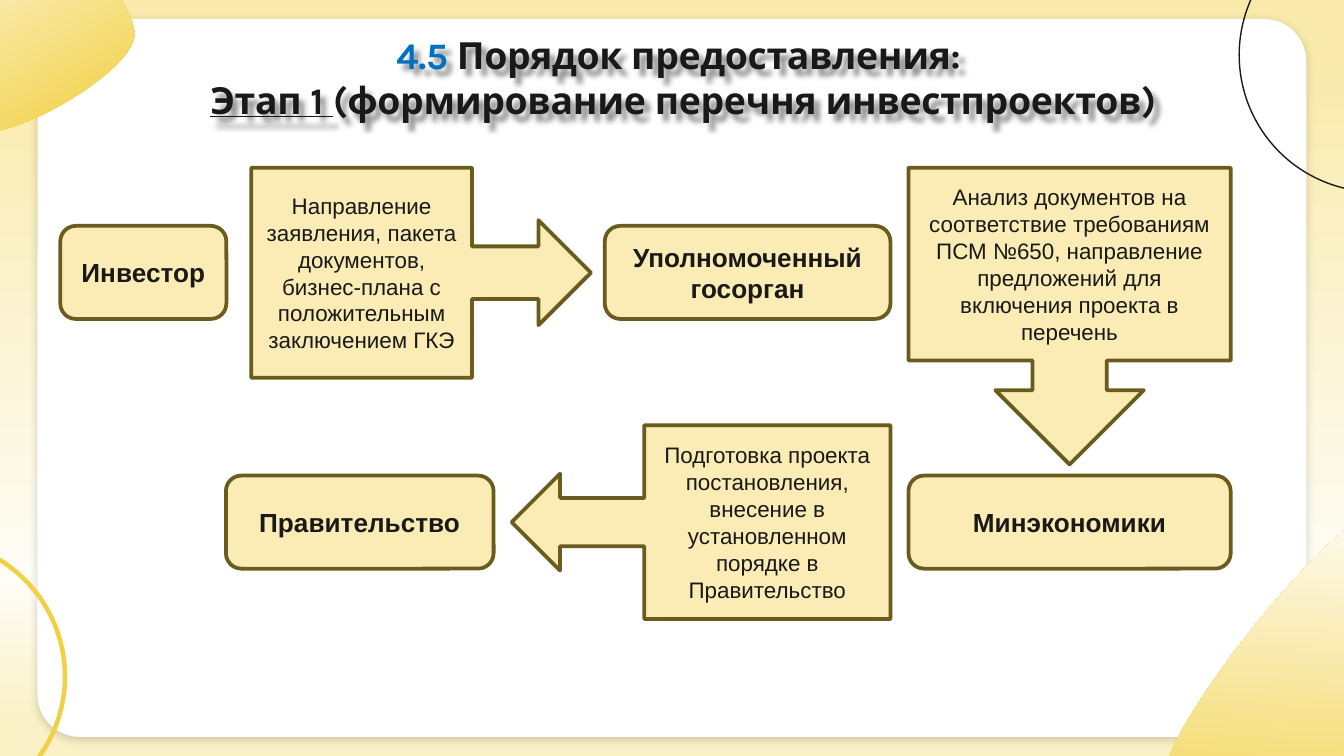
from lxml import etree
from pptx import Presentation
from pptx import util as u
from pptx.dml.color import RGBColor
from pptx.enum import shapes, text
from pptx.oxml.ns import qn

GOLD = RGBColor(0xF2, 0xD0, 0x44)
WHITE = RGBColor(0xFF, 0xFF, 0xFF)
INK = RGBColor(0x19, 0x19, 0x19)
BLUE = RGBColor(0x00, 0x70, 0xC0)
CREAM = RGBColor(0xFA, 0xEC, 0xB4)
BROWN = RGBColor(0x6A, 0x5B, 0x1E)
BLACK = RGBColor(0, 0, 0)
SKY = [(0, RGBColor(0xF9, 0xEA, 0xAB)), (7, RGBColor(0xF9, 0xEA, 0xAB)),
       (77, RGBColor(0xFE, 0xFD, 0xF6)), (95, RGBColor(0xFB, 0xF1, 0xC7))]
GLOW = [(0, GOLD), (15, GOLD), (100, WHITE)]
KIND = shapes.MSO_SHAPE


def paint_gradient(owner, fill, stops, clockwise):
    """Fill with any number of (percent, colour) stops."""
    fill.gradient()
    fill.gradient_angle = 360 - clockwise
    stop_list = owner.find(".//" + qn("a:gsLst"))
    for old in list(stop_list):
        stop_list.remove(old)
    for percent, colour in stops:
        stop = etree.SubElement(stop_list, qn("a:gs"), pos=str(percent * 1000))
        etree.SubElement(stop, qn("a:srgbClr"), val=str(colour))


def add_shadow(shape, opacity, blur, distance, degrees):
    shape.shadow.inherit = False
    effects = shape.element.spPr.find(qn("a:effectLst"))
    shadow = etree.SubElement(
        effects, qn("a:outerShdw"), blurRad=str(u.Pt(blur)), dist=str(u.Pt(distance)),
        dir=str(degrees * 60000), algn="bl", rotWithShape="0")
    colour = etree.SubElement(shadow, qn("a:srgbClr"), val=str(BLACK))
    etree.SubElement(colour, qn("a:alpha"), val=str(opacity * 1000))


def add_figure(page, kind, left, top, width, height, fill=None, line=None, weight=2):
    figure = page.shapes.add_shape(kind, u.Cm(left), u.Cm(top), u.Cm(width), u.Cm(height))
    figure.shadow.inherit = False
    if fill is None:
        figure.fill.background()
    else:
        figure.fill.solid()
        figure.fill.fore_color.rgb = fill
    if line is None:
        figure.line.fill.background()
    else:
        figure.line.color.rgb = line
        figure.line.width = u.Pt(weight)
    return figure


def add_blob(page, left, top, width, height, turn, start, curves):
    """Closed outline of cubic curves, in cm from the corner of its box."""
    builder = page.shapes.build_freeform(0, 0)
    builder.add_line_segments([(u.Cm(width), 0), (u.Cm(width), u.Cm(height))])
    blob = builder.convert_to_shape()
    outline = blob.element.find(".//" + qn("a:path"))
    for segment in list(outline):
        outline.remove(segment)
    outline.set("w", str(u.Cm(width)))
    outline.set("h", str(u.Cm(height)))
    for tag, points in [("a:moveTo", [start])] + [("a:cubicBezTo", c) for c in curves]:
        segment = etree.SubElement(outline, qn(tag))
        for x, y in points:
            etree.SubElement(segment, qn("a:pt"), x=str(u.Cm(x)), y=str(u.Cm(y)))
    etree.SubElement(outline, qn("a:close"))
    blob.left, blob.top = u.Cm(left), u.Cm(top)
    blob.width, blob.height = u.Cm(width), u.Cm(height)
    blob.rotation = turn
    blob.shadow.inherit = False
    blob.line.fill.background()
    paint_gradient(blob.element, blob.fill, GLOW, 225)


def add_span(para, words, font, size, colour, bold=False):
    span = para.add_run()
    span.text = words
    span.font.name = font
    span.font.size = u.Pt(size)
    span.font.bold = bold
    span.font.color.rgb = colour
    return span


def draw_backdrop(page, width, height):
    paint_gradient(page.element, page.background.fill, SKY, 90)
    # White panel with a soft shadow
    side, edge = 0.71, 0.36
    panel = add_figure(page, KIND.ROUNDED_RECTANGLE, side, edge,
                       width - 2 * side, height - 2 * edge, WHITE)
    panel.adjustments[0] = 0.059
    add_shadow(panel, 17, 4.5, 1.5, 90)
    # Corner ornaments
    add_blob(page, width - 2.72, height - 4.1, 5.16, 6.76, 48.9, (0.2, 0.11), [
        ((0.81, -0.5), (4.91, 1.99), (5.13, 3.09)),
        ((5.31, 4.19), (2.21, 7.21), (1.4, 6.71)),
        ((0.57, 6.23), (-0.42, 0.72), (0.2, 0.11))])
    ring = add_figure(page, KIND.DONUT, -3.99, height - 4.13, 5.26, 5.26, GOLD)
    ring.adjustments[0] = 0.016
    add_blob(page, -1.04, -1.96, 3.58, 4.72, 15.4, (0.15, 0.07), [
        ((0.58, -0.36), (3.43, 1.38), (3.59, 2.15)),
        ((3.72, 2.91), (1.56, 5.03), (0.96, 4.67)),
        ((0.4, 4.33), (-0.3, 0.48), (0.15, 0.07))])
    add_figure(page, KIND.OVAL, width - 1.98, -1.55, 5.18, 5.18, line=INK, weight=0.75)


def draw_title(page, left, top, width, height):
    title = page.shapes.title
    title.left, title.top = u.Cm(left), u.Cm(top)
    title.width, title.height = u.Cm(width), u.Cm(height)
    title.element.getparent().append(title.element)  # bring in front of the panel
    title.fill.background()
    add_shadow(title, 43, 3, 4, 45)
    frame = title.text_frame
    frame.auto_size = text.MSO_AUTO_SIZE.NONE
    frame.vertical_anchor = text.MSO_ANCHOR.TOP
    frame.margin_left = frame.margin_right = u.Cm(0.25)
    frame.margin_top = frame.margin_bottom = u.Cm(0.25)
    lines = [[("4.5 ", BLUE, False), ("Порядок предоставления: ", INK, False)],
             [("Этап 1 ", INK, True), ("(формирование перечня инвестпроектов)", INK, False)]]
    for index, spans in enumerate(lines):
        para = frame.add_paragraph() if index else frame.paragraphs[0]
        para.alignment = text.PP_ALIGN.CENTER
        para.line_spacing = 1.0
        for words, colour, underlined in spans:
            span = add_span(para, words, "Karla", 20, colour, bold=True)
            span.font.underline = underlined
            para.runs[-1]._r.rPr.set("spc", "-20")


def draw_flow(page, left, top):
    def add_step(kind, x, y, width, height, words, size, bold):
        step = add_figure(page, kind, left + x, top + y, width, height, CREAM, BROWN)
        frame = step.text_frame
        frame.word_wrap = True
        frame.vertical_anchor = text.MSO_ANCHOR.MIDDLE
        para = frame.paragraphs[0]
        para.alignment = text.PP_ALIGN.CENTER
        add_span(para, words, "Arial", size, INK, bold)

    # Participants
    upper, lower, last_column = 1.1, 5.82, 16.03
    for x, y, width, words in [
            (0, upper, 3.14, "Инвестор"),
            (10.29, upper, 5.4, "Уполномоченный госорган"),
            (last_column, lower, 6.09, "Минэкономики"),
            (3.13, lower, 5.06, "Правительство")]:
        add_step(KIND.ROUNDED_RECTANGLE, x, y, width, 1.76, words, 14, True)
    # Actions that lead from one participant to the next
    for kind, x, y, width, height, words in [
            (KIND.RIGHT_ARROW_CALLOUT, 3.61, 0, 6.42, 3.97,
             "Направление заявления, пакета документов, бизнес-плана "
             "с положительным заключением ГКЭ"),
            (KIND.DOWN_ARROW_CALLOUT, last_column, 0, 6.09, 5.61,
             "Анализ документов на соответствие требованиям ПСМ №650, "
             "направление предложений для включения проекта в перечень"),
            (KIND.LEFT_ARROW_CALLOUT, 8.53, 4.87, 7.16, 3.66,
             "Подготовка проекта постановления, внесение в установленном "
             "порядке в Правительство")]:
        add_step(kind, x, y, width, height, words, 12, False)


def main():
    width, height = 25.4, 14.29
    deck = Presentation()
    deck.slide_width, deck.slide_height = u.Cm(width), u.Cm(height)
    page = deck.slides.add_slide(deck.slide_layouts[5])
    draw_backdrop(page, width, height)
    draw_title(page, 2.13, 0.36, 21.56, 1.75)
    draw_flow(page, 1.14, 3.17)
    deck.save("out.pptx")


if __name__ == "__main__":
    main()
